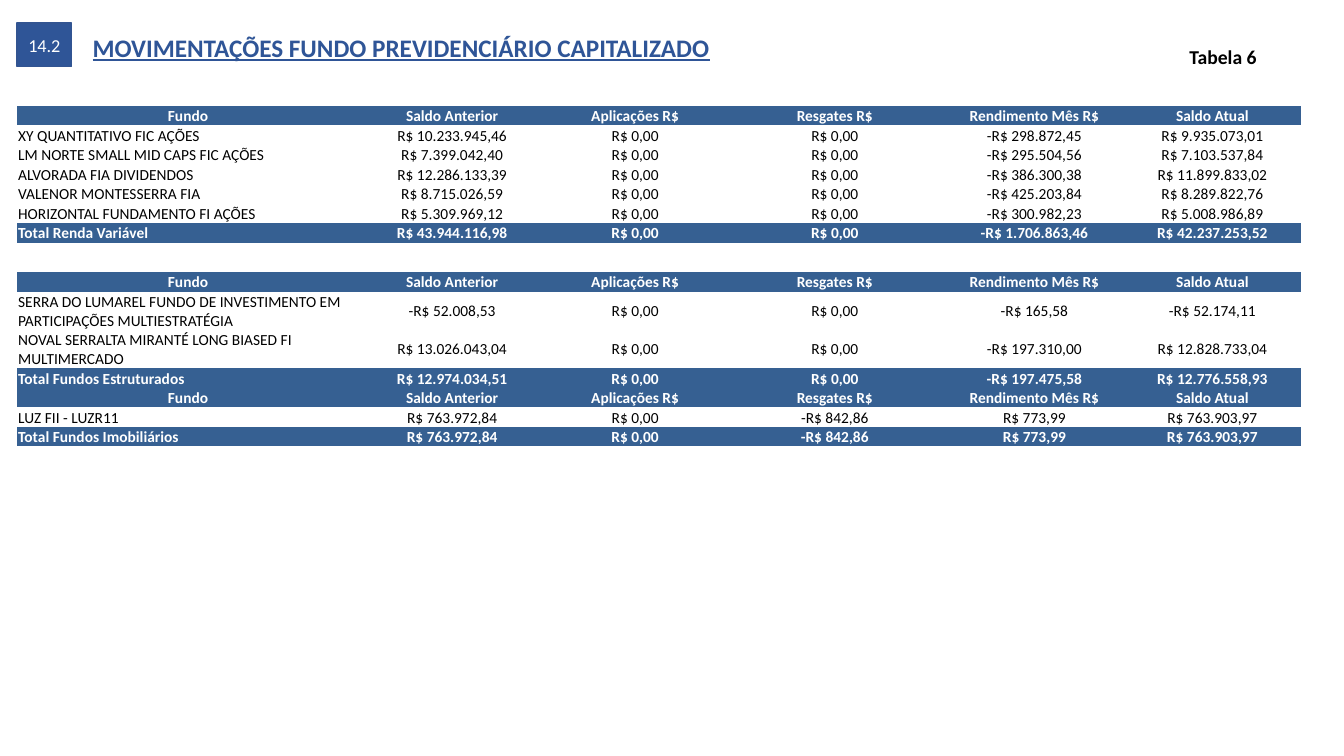
from pptx import Presentation
from pptx.dml.color import RGBColor
from pptx.enum.shapes import MSO_SHAPE
from pptx.enum.text import MSO_ANCHOR, MSO_AUTO_SIZE, PP_ALIGN
from pptx.oxml.ns import qn
from pptx.util import Inches, Pt

BLUE, TABLE_BLUE, WHITE, BLACK = "2F5597", "366092", "FFFFFF", "000000"
NO_STYLE = "{2D5ABB26-0587-4C30-8999-92F81FD0307C}"


def rgb(color):
    return RGBColor.from_string(color)


def add_text(tf, text, size, color, bold=False, align=PP_ALIGN.LEFT):
    p = tf.paragraphs[0]
    p.alignment = align
    r = p.add_run()
    r.text = text
    r.font.name = "Calibri"
    r.font.size = Pt(size)
    r.font.bold = bold
    r.font.color.rgb = rgb(color)
    return r


prs = Presentation()
prs.slide_width, prs.slide_height = Inches(13.33), Inches(7.5)
s = prs.slides.add_slide(prs.slide_layouts[6])

# Section number
sp = s.shapes.add_shape(MSO_SHAPE.RECTANGLE, Inches(0.17), Inches(0.23), Inches(0.54), Inches(0.43))
sp.shadow.inherit = False
sp.fill.solid()
sp.fill.fore_color.rgb = rgb(BLUE)
sp.line.color.rgb = rgb("325491")
sp.line.width = Pt(1)
tf = sp.text_frame
tf.margin_left = tf.margin_right = 0
tf.vertical_anchor = MSO_ANCHOR.MIDDLE
add_text(tf, "14.2", 13, WHITE, align=PP_ALIGN.CENTER)

# Title and table label
labels = [
    ("MOVIMENTAÇÕES FUNDO PREVIDENCIÁRIO CAPITALIZADO", 0.82, 0.27, 6.76, 0.4, 18, BLUE, PP_ALIGN.LEFT, True),
    ("Tabela 6", 11.09, 0.4, 2.08, 0.34, 14, BLACK, PP_ALIGN.CENTER, False),
]
for text, x, y, w, h, size, color, align, underline in labels:
    tf = s.shapes.add_textbox(Inches(x), Inches(y), Inches(w), Inches(h)).text_frame
    tf.word_wrap = True
    tf.auto_size = MSO_AUTO_SIZE.SHAPE_TO_FIT_TEXT
    r = add_text(tf, text, size, color, True, align)
    if underline:
        r.font.underline = True

# Fund tables: top, indexes of two-line rows, rows
header = ("Fundo", "Saldo Anterior", "Aplicações R$", "Resgates R$", "Rendimento Mês R$", "Saldo Atual")
zero = "R$ 0,00"
tables = [
    (1.05, (), [
        header,
        ("XY QUANTITATIVO FIC AÇÕES", "R$ 10.233.945,46", zero, zero, "-R$ 298.872,45", "R$ 9.935.073,01"),
        ("LM NORTE SMALL MID CAPS FIC AÇÕES", "R$ 7.399.042,40", zero, zero, "-R$ 295.504,56", "R$ 7.103.537,84"),
        ("ALVORADA FIA DIVIDENDOS", "R$ 12.286.133,39", zero, zero, "-R$ 386.300,38", "R$ 11.899.833,02"),
        ("VALENOR MONTESSERRA FIA", "R$ 8.715.026,59", zero, zero, "-R$ 425.203,84", "R$ 8.289.822,76"),
        ("HORIZONTAL FUNDAMENTO FI AÇÕES", "R$ 5.309.969,12", zero, zero, "-R$ 300.982,23", "R$ 5.008.986,89"),
        ("Total Renda Variável", "R$ 43.944.116,98", zero, zero, "-R$ 1.706.863,46", "R$ 42.237.253,52"),
    ]),
    (2.7, (1, 2), [
        header,
        ("SERRA DO LUMAREL FUNDO DE INVESTIMENTO EM PARTICIPAÇÕES MULTIESTRATÉGIA",
         "-R$ 52.008,53", zero, zero, "-R$ 165,58", "-R$ 52.174,11"),
        ("NOVAL SERRALTA MIRANTÉ LONG BIASED FI MULTIMERCADO",
         "R$ 13.026.043,04", zero, zero, "-R$ 197.310,00", "R$ 12.828.733,04"),
        ("Total Fundos Estruturados", "R$ 12.974.034,51", zero, zero, "-R$ 197.475,58", "R$ 12.776.558,93"),
        header,
        ("LUZ FII - LUZR11", "R$ 763.972,84", zero, "-R$ 842,86", "R$ 773,99", "R$ 763.903,97"),
        ("Total Fundos Imobiliários", "R$ 763.972,84", zero, "-R$ 842,86", "R$ 773,99", "R$ 763.903,97"),
    ]),
]
col_widths = [3.39, 1.85, 1.78, 2.18, 1.78, 1.75]
row_height = 0.19

for top, tall_rows, rows in tables:
    height = row_height * (len(rows) + len(tall_rows))
    table = s.shapes.add_table(len(rows), len(header), Inches(0.17), Inches(top),
                               Inches(sum(col_widths)), Inches(height)).table
    table.first_row = table.horz_banding = False
    table._tbl.tblPr.find(qn("a:tableStyleId")).text = NO_STYLE
    for column, width in zip(table.columns, col_widths):
        column.width = Inches(width)
    for i, values in enumerate(rows):
        table.rows[i].height = Inches(row_height * (2 if i in tall_rows else 1))
        is_header = values is header
        strong = is_header or values[0].startswith("Total")
        for j, value in enumerate(values):
            cell = table.cell(i, j)
            cell.margin_left = cell.margin_top = cell.margin_right = Inches(0.01)
            cell.margin_bottom = 0
            cell.vertical_anchor = MSO_ANCHOR.MIDDLE
            cell.fill.solid()
            cell.fill.fore_color.rgb = rgb(TABLE_BLUE if strong else WHITE)
            align = PP_ALIGN.CENTER if is_header or j else PP_ALIGN.LEFT
            add_text(cell.text_frame, value, 11, WHITE if strong else BLACK, strong, align)

prs.save("out.pptx")
